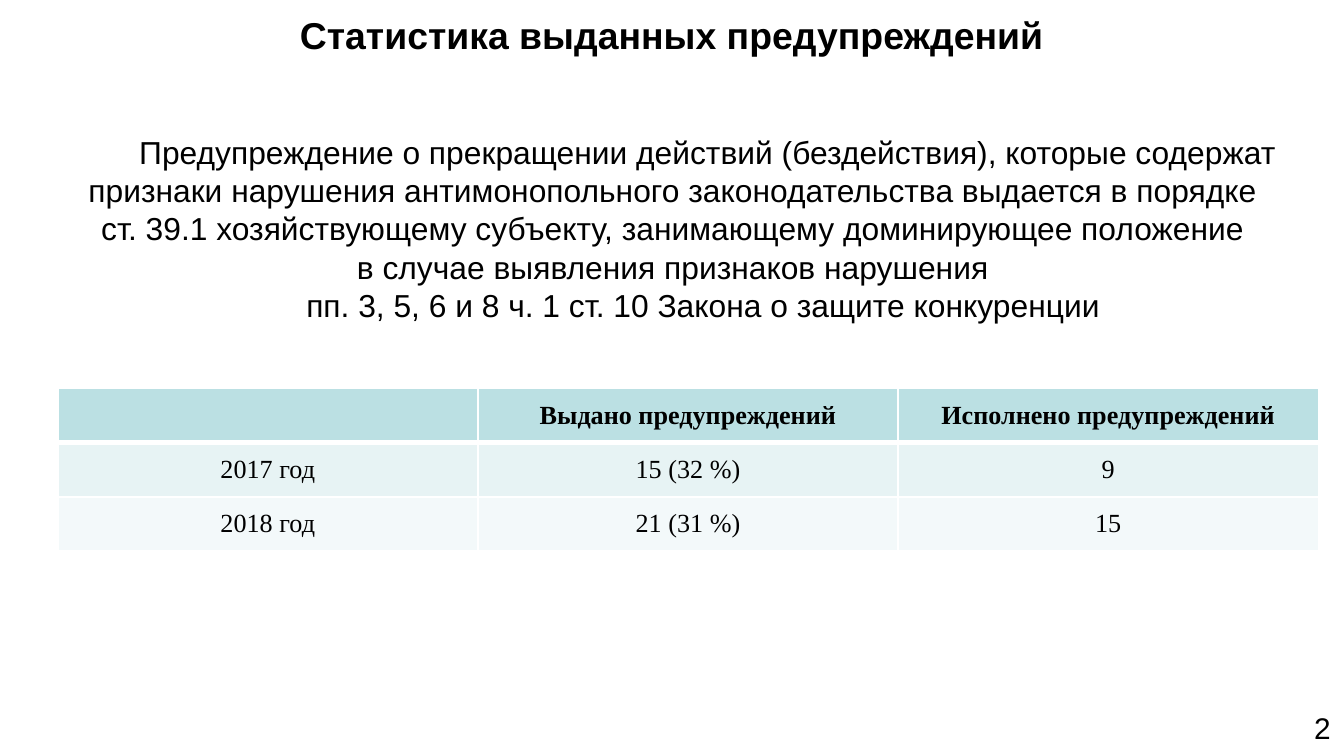
import pptx
import pptx.dml.color
import pptx.enum.text
import pptx.oxml.ns
import pptx.util
from dataclasses import dataclass
from lxml import etree

Inches = pptx.util.Inches
Pt = pptx.util.Pt
Align = pptx.enum.text.PP_ALIGN
Anchor = pptx.enum.text.MSO_ANCHOR


@dataclass(frozen=True)
class Theme:
    ink: str = "000000"
    border: str = "FFFFFF"
    row_fills: tuple = ("BBE0E3", "E7F3F4", "F3F9FA")
    sans: str = "Arial"
    serif: str = "Times New Roman"
    title_size: int = 20
    body_size: int = 17
    number_size: int = 16
    table_size: int = 14
    thin: int = 1
    thick: int = 3


THEME = Theme()

TITLE = "Статистика выданных предупреждений"
EXPLANATION = (
    (
        " Предупреждение о прекращении действий (бездействия), которые содержат "
        "признаки нарушения антимонопольного законодательства выдается в порядке ",
        "ст. 39.1 хозяйствующему субъекту, занимающему доминирующее положение ",
        "в случае выявления признаков нарушения ",
    ),
    ("пп. 3, 5, 6 и 8 ч. 1 ст. 10 Закона о защите конкуренции",),
)
WARNINGS = (
    ("", "Выдано предупреждений", "Исполнено предупреждений"),
    ("2017 год", "15 (32 %)", "9"),
    ("2018 год", "21 (31 %)", "15"),
)


def color(value):
    return pptx.dml.color.RGBColor.from_string(value)


def write(paragraph, text, size, font, bold=False):
    run = paragraph.add_run()
    run.text = text
    run.font.size = Pt(size)
    run.font.name = font
    run.font.bold = bold
    run.font.color.rgb = color(THEME.ink)


def add_title(slide):
    title = slide.shapes.title
    title.left, title.top = Inches(0), Inches(0)
    title.width, title.height = Inches(10), Inches(0.51)
    frame = title.text_frame
    frame.vertical_anchor = Anchor.MIDDLE
    frame.paragraphs[0].alignment = Align.CENTER
    write(frame.paragraphs[0], TITLE, THEME.title_size, THEME.sans, True)


def add_text(slide, left, top, width, height, paragraphs, size, align, indent=0):
    box = slide.shapes.add_textbox(
        Inches(left), Inches(top), Inches(width), Inches(height)
    )
    frame = box.text_frame
    frame.word_wrap = True
    for index, lines in enumerate(paragraphs):
        paragraph = frame.add_paragraph() if index else frame.paragraphs[0]
        paragraph.alignment = align
        if indent:
            properties = paragraph._p.get_or_add_pPr()
            properties.set("marL", "0")
            properties.set("indent", str(Inches(indent)))
        for number, line in enumerate(lines):
            if number:
                paragraph.add_line_break()
            write(paragraph, line, size, THEME.sans)
    return frame


def set_borders(cell, top, bottom):
    properties = cell._tc.get_or_add_tcPr()
    widths = {"lnL": THEME.thin, "lnR": THEME.thin, "lnT": top, "lnB": bottom}
    for side, width in widths.items():
        line = etree.SubElement(
            properties, pptx.oxml.ns.qn(f"a:{side}"), w=str(Pt(width))
        )
        fill = etree.SubElement(line, pptx.oxml.ns.qn("a:solidFill"))
        etree.SubElement(fill, pptx.oxml.ns.qn("a:srgbClr"), val=THEME.border)


def add_warnings_table(slide):
    table = slide.shapes.add_table(
        len(WARNINGS), len(WARNINGS[0]),
        Inches(0.43), Inches(2.89), Inches(9.38), Inches(1.21),
    ).table
    for row, values in enumerate(WARNINGS):
        for column, value in enumerate(values):
            cell = table.cell(row, column)
            set_borders(
                cell,
                top=THEME.thick if row == 1 else THEME.thin,
                bottom=THEME.thick if row == 0 else THEME.thin,
            )
            cell.fill.solid()
            cell.fill.fore_color.rgb = color(THEME.row_fills[row])
            cell.vertical_anchor = Anchor.MIDDLE
            paragraph = cell.text_frame.paragraphs[0]
            paragraph.alignment = Align.CENTER
            if value:
                write(paragraph, value, THEME.table_size, THEME.serif, row == 0)


def main():
    deck = pptx.Presentation()
    deck.slide_width = Inches(10)
    deck.slide_height = deck.slide_width * 9 // 16
    slide = deck.slides.add_slide(deck.slide_layouts.get_by_name("Title Only"))
    add_title(slide)
    add_text(slide, 7.67, 5.23, 2.33, 0.25, (("2",),),
             THEME.number_size, Align.RIGHT)
    explanation = add_text(slide, 0.35, 0.94, 9.38, 1.55, EXPLANATION,
                           THEME.body_size, Align.CENTER, indent=0.39)
    explanation.auto_size = pptx.enum.text.MSO_AUTO_SIZE.SHAPE_TO_FIT_TEXT
    add_warnings_table(slide)
    deck.save("out.pptx")


if __name__ == "__main__":
    main()
